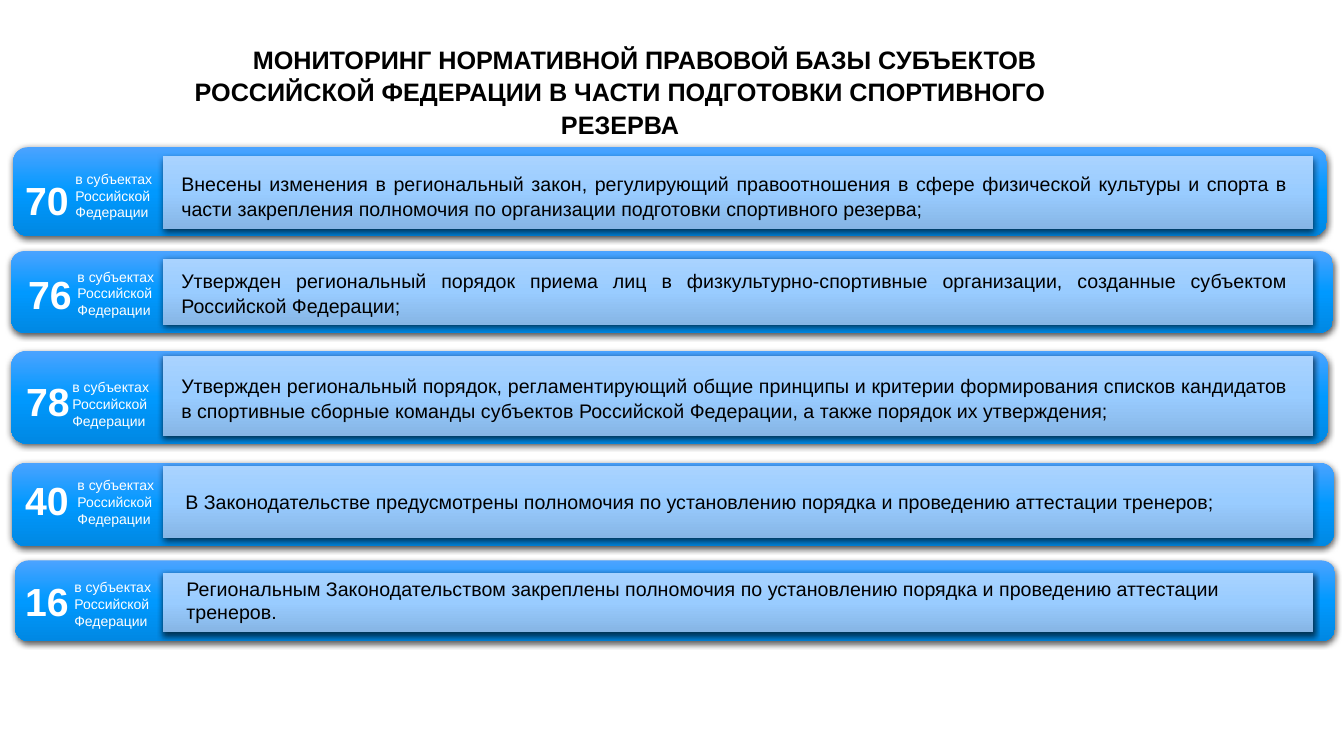
"""Slide on the monitoring of regional sports regulations."""
from copy import deepcopy

from lxml import etree
from pptx import Presentation, util as u
from pptx.dml.color import RGBColor
from pptx.enum import shapes, text
from pptx.oxml import ns

BLACK = RGBColor(0x00, 0x00, 0x00)
WHITE = RGBColor(0xFF, 0xFF, 0xFF)
BAR = [RGBColor(0x4B, 0xA3, 0xFF), RGBColor(0x00, 0x99, 0xFF), RGBColor(0x00, 0x88, 0xE3)]
PANEL = [RGBColor(0xA9, 0xD3, 0xFF), RGBColor(0x99, 0xCC, 0xFF), RGBColor(0x86, 0xB5, 0xE5)]
LEFT, CENTER, JUSTIFY = text.PP_ALIGN.LEFT, text.PP_ALIGN.CENTER, text.PP_ALIGN.JUSTIFY

prs = Presentation()
prs.slide_width, prs.slide_height = u.Inches(13.33), u.Inches(7.5)
COL, ROW = prs.slide_width / 100, prs.slide_height / 100
s = prs.slides.add_slide(prs.slide_layouts[5])


def write(sp, words, size, color=BLACK, bold=False, align=LEFT, spacing=1.0, wrap=True):
    """Fill a text shape with one paragraph per line of words."""
    tf = sp.text_frame
    tf.word_wrap = wrap
    tf.auto_size = text.MSO_AUTO_SIZE.SHAPE_TO_FIT_TEXT
    tf.vertical_anchor = text.MSO_ANCHOR.TOP
    tf.text = words
    for p in tf.paragraphs:
        p.alignment, p.line_spacing = align, spacing
        for r in p.runs:
            r.font.name, r.font.size, r.font.bold = "Arial", u.Pt(size), bold
            r.font.color.rgb = color


def add_block(kind, x, y, w, h, colors):
    """Add a gradient block with a soft shadow, measured in columns and rows."""
    sp = s.shapes.add_shape(kind, int(x * COL), int(y * ROW), int(w * COL), int(h * ROW))
    sp.line.fill.background()
    sp.fill.gradient()
    sp.fill.gradient_angle = 270
    stops = sp._element.spPr.find(".//" + ns.qn("a:gsLst"))
    stops.append(deepcopy(stops[0]))
    for i, stop in enumerate(sp.fill.gradient_stops):
        stop.position, stop.color.rgb = i / 2, colors[i]
    sp.shadow.inherit = False
    effects = sp._element.spPr.find(ns.qn("a:effectLst"))
    shadow = etree.SubElement(effects, ns.qn("a:outerShdw"), blurRad=str(u.Pt(4.5)),
                              dist=str(u.Pt(1.5)), dir="5400000", rotWithShape="0")
    black = etree.SubElement(shadow, ns.qn("a:srgbClr"), val=str(BLACK))
    etree.SubElement(black, ns.qn("a:alpha"), val="63000")


title = s.shapes.title
title.left, title.top = int(10.5 * COL), int(4.93 * ROW)
title.width, title.height = int(71.27 * COL), int(14.67 * ROW)
write(title, "МОНИТОРИНГ НОРМАТИВНОЙ ПРАВОВОЙ БАЗЫ СУБЪЕКТОВ РОССИЙСКОЙ ФЕДЕРАЦИИ "
      "В ЧАСТИ ПОДГОТОВКИ СПОРТИВНОГО РЕЗЕРВА",
      18, bold=True, align=CENTER, spacing=1.07)
title.text_frame.paragraphs[0]._p.get_or_add_pPr().set("indent", str(u.Inches(0.49)))

REGIONS = "в субъектах\nРоссийской\nФедерации"
measures = [
    dict(bar=(0.98, 19.47, 97.75, 11.73), panel=(20.67, 9.6), number=(1.13, 22.67),
         label=(4.88, 21.87), body=(12.75, 21.87, 7.87), align=JUSTIFY, spacing=1.07, count="70",
         words="Внесены изменения в региональный закон, регулирующий правоотношения в сфере "
               "физической культуры и спорта в части закрепления полномочия по организации "
               "подготовки спортивного резерва;"),
    dict(bar=(0.83, 33.2, 98.35, 10.8), panel=(34.27, 8.67), number=(1.35, 35.07),
         label=(5.03, 34.8), body=(12.75, 34.67, 7.87), align=JUSTIFY, spacing=1.07, count="76",
         words="Утвержден региональный порядок приема лиц в физкультурно-спортивные "
               "организации, созданные субъектом Российской Федерации;"),
    dict(bar=(0.83, 46.4, 97.97, 12.27), panel=(47.07, 10.67), number=(1.2, 49.2),
         label=(4.65, 49.47), body=(12.75, 48.53, 7.87), align=JUSTIFY, spacing=1.07, count="78",
         words="Утвержден региональный порядок, регламентирующий общие принципы и критерии "
               "формирования списков кандидатов в спортивные сборные команды субъектов "
               "Российской Федерации, а также порядок их утверждения;"),
    dict(bar=(0.9, 61.2, 98.35, 11.07), panel=(61.6, 9.6), number=(1.13, 62.4),
         label=(5.03, 62.4), body=(13.05, 64.13, 4.53), align=LEFT, spacing=1.0, count="40",
         words="В Законодательстве предусмотрены полномочия по установлению порядка и "
               "проведению аттестации тренеров;"),
    dict(bar=(1.13, 74.13, 98.2, 10.67), panel=(75.73, 7.87), number=(1.13, 75.73),
         label=(4.8, 75.87), body=(13.13, 75.6, 7.6), align=LEFT, spacing=1.0, count="16",
         words="Региональным Законодательством закреплены полномочия по установлению порядка "
               "и проведению аттестации тренеров."),
]

for m in measures:
    add_block(shapes.MSO_SHAPE.ROUNDED_RECTANGLE, *m["bar"], BAR)
    top, height = m["panel"]
    add_block(shapes.MSO_SHAPE.RECTANGLE, 12.12, top, 85.6, height, PANEL)

    x, y = m["number"]
    sp = s.shapes.add_textbox(int(x * COL), int(y * ROW), int(4.8 * COL), int(7.6 * ROW))
    write(sp, m["count"], 28, color=WHITE, bold=True, wrap=False)

    x, y = m["label"]
    sp = s.shapes.add_textbox(int(x * COL), int(y * ROW), int(7.4 * COL), int(8.13 * ROW))
    write(sp, REGIONS, 10, color=WHITE, wrap=False)

    x, y, h = m["body"]
    sp = s.shapes.add_textbox(int(x * COL), int(y * ROW), int(83.8 * COL), int(h * ROW))
    write(sp, m["words"], 14, align=m["align"], spacing=m["spacing"])

prs.save("out.pptx")
